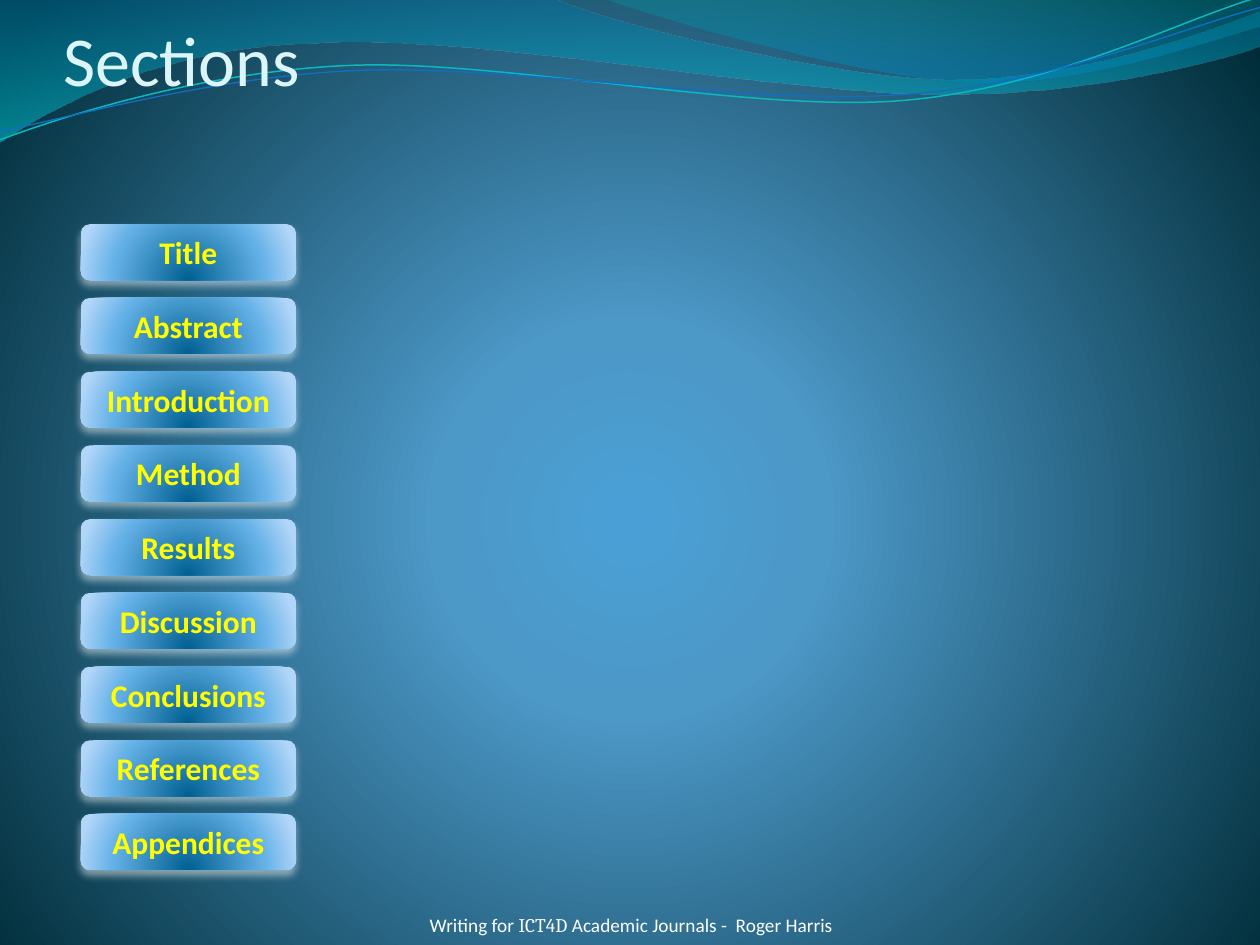
from dataclasses import dataclass
from math import cos, radians, sin

from pptx import Presentation
from pptx.dml.color import RGBColor
from pptx.enum.shapes import MSO_SHAPE
from pptx.enum.text import MSO_ANCHOR, MSO_AUTO_SIZE, PP_ALIGN
from pptx.oxml import parse_xml
from pptx.oxml.ns import nsdecls, qn
from pptx.util import Pt


@dataclass(frozen=True)
class Theme:
    font: str = "Calibri"
    serif: str = "Cambria"
    title_size: int = 40
    button_size: int = 18
    footer_size: int = 11
    title: str = "DBF5F9"
    label: str = "FFFF00"
    footer: str = "FFFFFF"
    shadow: str = "FFFFFF"
    teal_line: str = "0AB8BF"
    blue_line: str = "0F6FC6"
    # Gradient stops: position %, colour, opacity %
    back: tuple = ((0, "4AA0D6", 100), (25, "4C98C7", 100), (100, "002C38", 100))
    button: tuple = ((0, "006091", 100), (68, "64B1E7", 100), (100, "B1D6F9", 100))
    wide_wave: tuple = ((0, "0074A1", 45), (100, "00C6CF", 55))
    right_wave: tuple = ((0, "00A1A9", 30), (80, "008BBF", 45))


# Each outline is a start point, then segments: one point is a straight
# line, three points are a cubic curve.
WIDE_WAVE = [
    [(0, 0)],
    [(316.8, -0.7)],
    [(342.7, 12.2), (478.1, 45.4), (545.8, 45.4)],
    [(614.2, 45.4), (689.8, 18.7), (720, 6.5)],
    [(720.7, 25.9)],
    [(707.8, 31.7), (626.4, 54.7), (537.1, 54)],
    [(447.8, 54), (275, 20.2), (185, 24.5)],
    [(92.9, 25.9), (33.1, 59.8), (-0.7, 81.4)],
    [(0, 0)],
]
RIGHT_WAVE = [
    [(344.9, -0.7)],
    [(366.5, 7.9), (491, 44.6), (553.7, 46.8)],
    [(616.3, 49.7), (691.9, 23), (720, 15.1)],
    [(720, 0)],
    [(344.9, -0.7)],
]
TEAL_CURVE = [
    [(0, 79.9)],
    [(34.6, 67), (113.8, 41), (199.4, 37.4)],
    [(284.4, 33.8), (427, 64.1), (513.4, 57.6)],
    [(599.8, 51.1), (675.4, 10.8), (718.6, -1.4)],
]
BLUE_CURVE = [
    [(0, 74.9)],
    [(33.8, 69.1), (118.1, 43.9), (203.8, 40.3)],
    [(290.2, 36.7), (429.8, 60.5), (516.2, 54)],
    [(601.9, 48.2), (677.5, 15.1), (720, 4.3)],
]
TILT = -2.7
SECTIONS = ["Title", "Abstract", "Introduction", "Method", "Results",
            "Discussion", "Conclusions", "References", "Appendices"]


def turn(outline, angle, cx, cy):
    c, s = cos(radians(angle)), sin(radians(angle))
    return [[(cx + (x - cx) * c - (y - cy) * s, cy + (x - cx) * s + (y - cy) * c)
             for x, y in segment] for segment in outline]


def set_gradient(props, stops, focus=None):
    """Replace a solid fill by a gradient: radial with a focus, else downward."""
    gs = ""
    for pos, color, opacity in stops:
        alpha = f'<a:alpha val="{opacity * 1000}"/>' if opacity < 100 else ""
        gs += f'<a:gs pos="{pos * 1000}"><a:srgbClr val="{color}">{alpha}</a:srgbClr></a:gs>'
    if focus:
        sides = " ".join(f'{side}="{v * 1000}"' for side, v in zip("ltrb", focus))
        kind = f'<a:path path="circle"><a:fillToRect {sides}/></a:path>'
    else:
        kind = '<a:lin ang="5400000" scaled="0"/>'
    grad = parse_xml(f'<a:gradFill {nsdecls("a")} rotWithShape="1">'
                     f'<a:gsLst>{gs}</a:gsLst>{kind}</a:gradFill>')
    props.replace(props.find(qn("a:solidFill")), grad)


class Builder:
    def __init__(self, prs, theme):
        self.theme = theme
        self.s = prs.slides.add_slide(prs.slide_layouts[6])

    def background(self):
        self.s.background.fill.solid()
        props = self.s.element.find(".//" + qn("p:bgPr"))
        set_gradient(props, self.theme.back, (10, 110, 10, 100))

    def freeform(self, outline):
        """Build straight segments between end points, then bend the cubic ones."""
        outline = [[(Pt(x), Pt(y)) for x, y in segment] for segment in outline]
        ends = [segment[-1] for segment in outline]
        builder = self.s.shapes.build_freeform(*ends[0])
        builder.add_line_segments(ends[1:], close=ends[0] == ends[-1])
        sp = builder.convert_to_shape()
        sp.shadow.inherit = False
        lines = list(sp.element.iter(qn("a:lnTo")))
        for line, segment in zip(lines, outline[1:]):
            if len(segment) == 3:
                pts = "".join(f'<a:pt x="{x - sp.left}" y="{y - sp.top}"/>'
                              for x, y in segment)
                cubic = parse_xml(f'<a:cubicBezTo {nsdecls("a")}>{pts}</a:cubicBezTo>')
                line.getparent().replace(line, cubic)
        return sp

    def wave(self, outline, stops):
        sp = self.freeform(outline)
        sp.line.fill.background()
        sp.fill.solid()
        set_gradient(sp.element.spPr, stops)

    def curve(self, outline, color, width, center):
        sp = self.freeform(turn(outline, -TILT, *center))
        sp.rotation = TILT
        sp.fill.background()
        sp.line.color.rgb = RGBColor.from_string(color)
        sp.line.width = Pt(width)

    def style(self, p, size, color, align=PP_ALIGN.LEFT, bold=False):
        p.alignment = align
        p.font.name = self.theme.font
        p.font.size = Pt(size)
        p.font.bold = bold
        p.font.color.rgb = RGBColor.from_string(color)

    def text_box(self, left, top, width, height):
        tf = self.s.shapes.add_textbox(Pt(left), Pt(top), Pt(width), Pt(height)).text_frame
        tf.word_wrap = True
        return tf

    def title(self, text):
        tf = self.text_box(36.3, 1, 529, 56.4)
        tf.vertical_anchor = MSO_ANCHOR.BOTTOM
        tf.margin_left = tf.margin_right = tf.margin_bottom = 0
        p = tf.paragraphs[0]
        p.text = text
        self.style(p, self.theme.title_size, self.theme.title)

    def button(self, text, left, top, width, height):
        sp = self.s.shapes.add_shape(MSO_SHAPE.ROUNDED_RECTANGLE, Pt(left), Pt(top),
                                     Pt(width), Pt(height))
        sp.line.fill.background()
        sp.fill.solid()
        set_gradient(sp.element.spPr, self.theme.button, (50, 130, 50, -30))
        sp.shadow.inherit = False
        sp.element.spPr.find(qn("a:effectLst")).append(parse_xml(
            f'<a:outerShdw {nsdecls("a")} blurRad="{Pt(4.5)}" dist="{Pt(3)}" '
            f'dir="5400000" rotWithShape="0"><a:srgbClr val="{self.theme.shadow}">'
            '<a:alpha val="48000"/></a:srgbClr></a:outerShdw>'))
        tf = sp.text_frame
        tf.vertical_anchor = MSO_ANCHOR.MIDDLE
        p = tf.paragraphs[0]
        p.text = text
        self.style(p, self.theme.button_size, self.theme.label, PP_ALIGN.CENTER, True)

    def footer(self, runs):
        tf = self.text_box(140.4, 518.4, 440.6, 20.9)
        tf.auto_size = MSO_AUTO_SIZE.SHAPE_TO_FIT_TEXT
        p = tf.paragraphs[0]
        self.style(p, self.theme.footer_size, self.theme.footer, PP_ALIGN.CENTER)
        for text, font in runs:
            r = p.add_run()
            r.text = text
            r.font.name = font


def main():
    prs = Presentation()
    prs.slide_width, prs.slide_height = Pt(720), Pt(540)
    theme = Theme()
    b = Builder(prs, theme)
    b.background()
    b.wave(WIDE_WAVE, theme.wide_wave)
    b.wave(RIGHT_WAVE, theme.right_wave)
    b.curve(TEAL_CURVE, theme.teal_line, 0.85, (359.3, 41.4))
    b.curve(BLUE_CURVE, theme.blue_line, 0.75, (359.6, 42.5))
    b.title("Sections")
    for i, name in enumerate(SECTIONS):
        b.button(name, 46.1, 128.1 + 42.13 * i, 123.1, 32)
    b.footer([("Writing for ", theme.font), ("ICT4D ", theme.serif),
              ("Academic Journals -  Roger Harris", theme.font)])
    prs.save("out.pptx")


if __name__ == "__main__":
    main()
